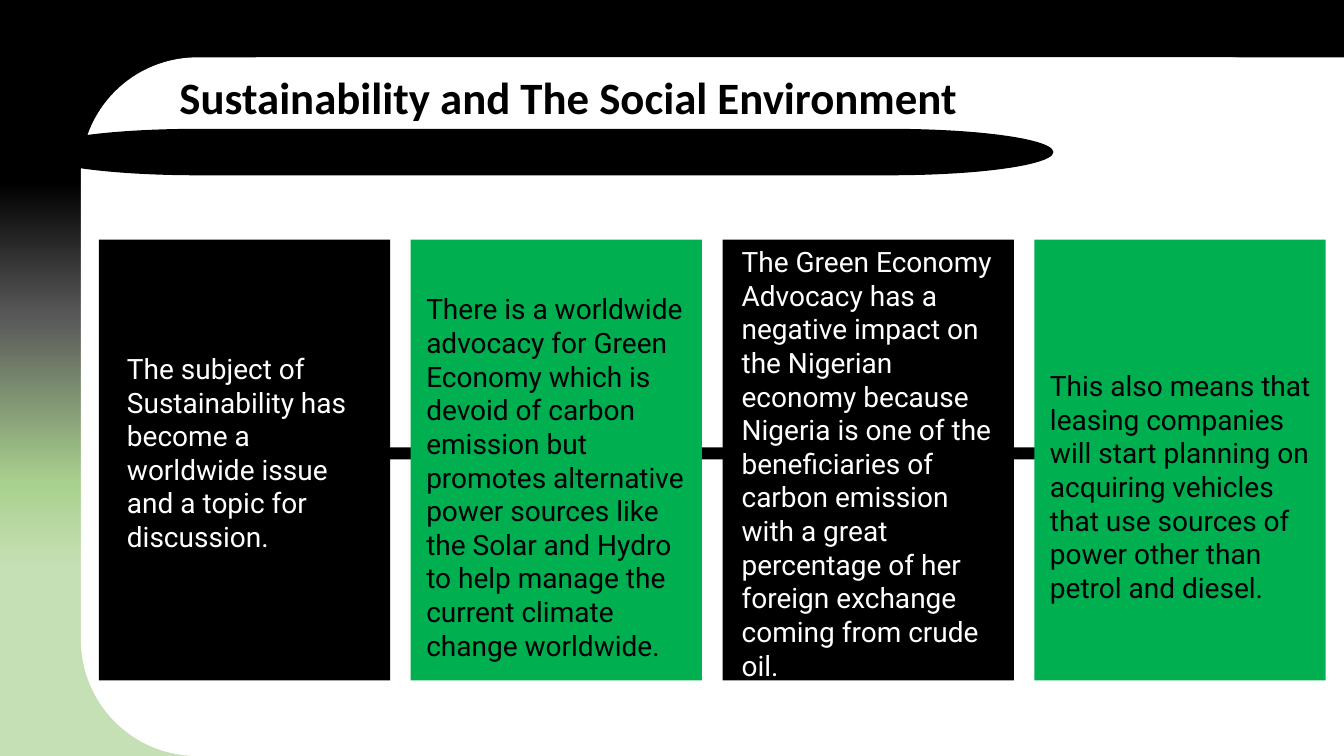
from dataclasses import dataclass

from lxml.etree import SubElement
from pptx import Presentation
from pptx.dml.color import RGBColor
from pptx.enum.shapes import MSO_SHAPE
from pptx.enum.text import MSO_ANCHOR, MSO_AUTO_SIZE, PP_ALIGN
from pptx.oxml.ns import qn
from pptx.util import Pt


@dataclass(frozen=True)
class Theme:
    black: str = "000000"
    white: str = "FFFFFF"
    green: str = "00B050"
    backdrop: tuple = ((25, "C5E0B4"), (36, "A9D18E"), (58, "595959"), (76, "000000"))
    title_font: str = "Calibri"
    body_font: str = "Roboto"
    title_size: int = 32
    body_size: int = 20


THEME = Theme()
SLIDE_WIDTH, SLIDE_HEIGHT = 960, 540
TITLE = "Sustainability and The Social Environment"

# Each card: fill, text colour, text box (left, top, width, height) within the card, text
CARDS = [
    (THEME.black, THEME.white, (13, 76.3, 193.7, 152.6),
     "The subject of Sustainability has become a worldwide issue and a topic for discussion."),
    (THEME.green, THEME.black, (4, 33.8, 206, 273.6),
     "There is a worldwide advocacy for Green Economy which is devoid of carbon emission "
     "but promotes alternative power sources like the Solar and Hydro to help manage the "
     "current climate change worldwide."),
    (THEME.black, THEME.white, (6.5, 0, 193.7, 322.6),
     "The Green Economy Advocacy has a negative impact on the Nigerian economy because "
     "Nigeria is one of the beneficiaries of carbon emission with a great percentage of "
     "her foreign exchange coming from crude oil."),
    (THEME.green, THEME.black, (4, 88.6, 208, 177.1),
     "This also means that leasing companies will start planning on acquiring vehicles "
     "that use sources of power other than petrol and diesel."),
]


def add_block(slide, kind, box, color):
    shape = slide.shapes.add_shape(kind, *map(Pt, box))
    shape.shadow.inherit = False
    shape.fill.solid()
    shape.fill.fore_color.rgb = RGBColor.from_string(color)
    shape.line.fill.background()
    return shape


def write_text(shape, text, font_name, size, color, bold=False):
    frame = shape.text_frame
    frame.text = text
    frame.word_wrap = True
    frame.auto_size = MSO_AUTO_SIZE.NONE
    frame.vertical_anchor = MSO_ANCHOR.TOP
    paragraph = frame.paragraphs[0]
    paragraph.alignment = PP_ALIGN.LEFT
    paragraph.font.name = font_name
    paragraph.font.size = Pt(size)
    paragraph.font.bold = bold
    paragraph.font.color.rgb = RGBColor.from_string(color)


def paint_background(slide):
    fill = slide.background.fill
    fill.gradient()
    fill.gradient_angle = 90
    stops = next(slide.element.iter(qn("a:gsLst")))
    for stop in list(stops):
        stops.remove(stop)
    for percent, color in THEME.backdrop:
        stop = SubElement(stops, qn("a:gs"), pos=str(percent * 1000))
        SubElement(stop, qn("a:srgbClr"), val=color)


def add_panel(slide, box):
    """White panel rounded on the left only: a square block covers its right corners."""
    left, top, width, height = box
    inset = 125
    add_block(slide, MSO_SHAPE.RECTANGLE, (left + inset, top, width - inset, height), THEME.white)
    add_block(slide, MSO_SHAPE.ROUNDED_RECTANGLE, box, THEME.white)


def add_header(slide, box):
    left, top, width, height = box
    band_height = 33.2
    band_top = top + height - band_height
    add_block(slide, MSO_SHAPE.FLOWCHART_TERMINATOR,
              (left, band_top, width, band_height), THEME.black)

    title = slide.shapes.title
    title.left, title.top = Pt(left + 96.5), Pt(top)
    title.width, title.height = Pt(597), Pt(band_top - top)
    write_text(title, TITLE, THEME.title_font, THEME.title_size, THEME.black, bold=True)
    slide.shapes.element.append(title.element)  # bring in front of the panel


def add_cards(slide, box):
    left, top, width, height = box
    gap = 14.7
    card_width = (width - gap * (len(CARDS) - 1)) / len(CARDS)

    # Bar joining the cards, running behind them
    bar_inset, bar_height = 73.5, 8.6
    add_block(slide, MSO_SHAPE.RECTANGLE,
              (left + bar_inset, top + 148.3, width - 2 * bar_inset - 2, bar_height),
              THEME.black)

    for index, (fill, color, text_box, text) in enumerate(CARDS):
        card_left = left + index * (card_width + gap)
        add_block(slide, MSO_SHAPE.RECTANGLE, (card_left, top, card_width, height), fill)
        text_left, text_top, text_width, text_height = text_box
        label = slide.shapes.add_textbox(Pt(card_left + text_left), Pt(top + text_top),
                                         Pt(text_width), Pt(text_height))
        write_text(label, text, THEME.body_font, THEME.body_size, color)


def build_slide(presentation):
    slide = presentation.slides.add_slide(presentation.slide_layouts[5])
    paint_background(slide)
    add_panel(slide, (57.8, 41, SLIDE_WIDTH - 57.8, SLIDE_HEIGHT - 41))
    add_header(slide, (24.5, 46, 728, 79.2))
    add_cards(slide, (70.6, 171.2, 876.4, 314.8))


def main():
    presentation = Presentation()
    presentation.slide_width, presentation.slide_height = Pt(SLIDE_WIDTH), Pt(SLIDE_HEIGHT)
    build_slide(presentation)
    presentation.save("out.pptx")


if __name__ == "__main__":
    main()
